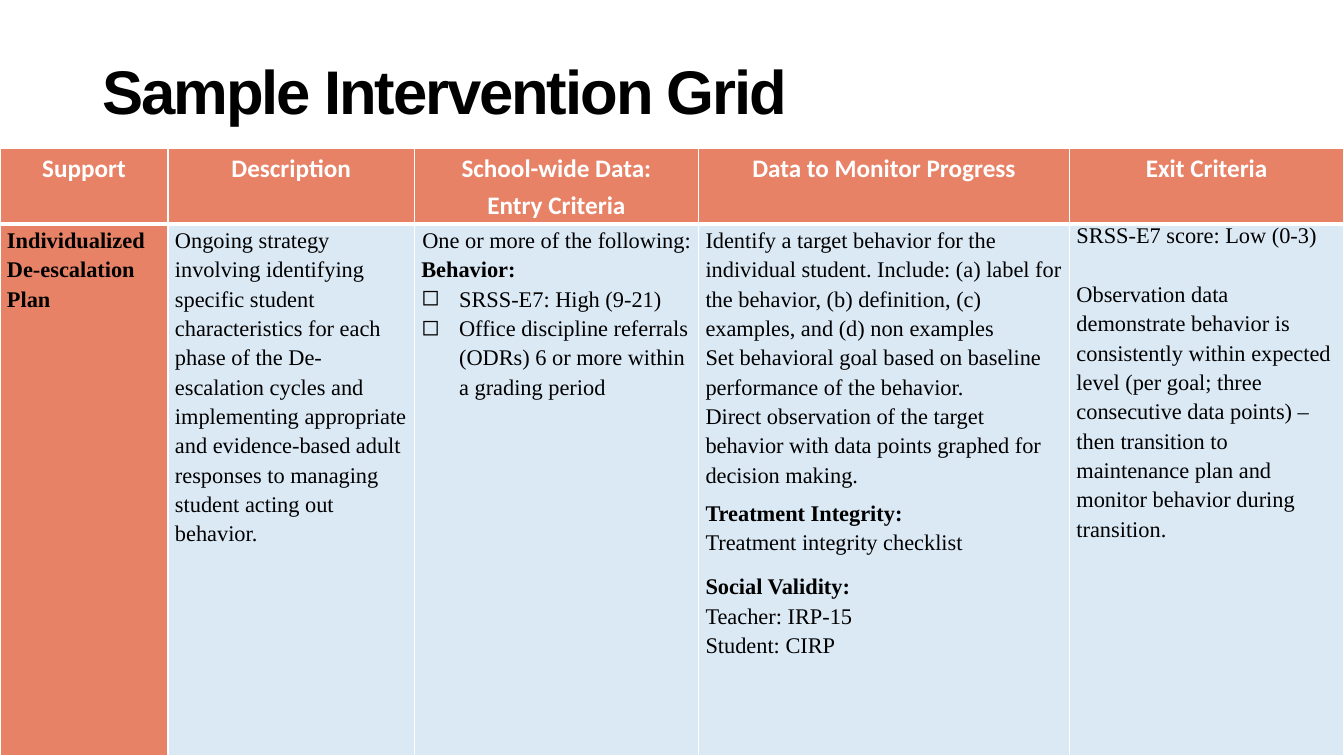
from lxml import etree
from pptx import Presentation
from pptx.dml.color import RGBColor
from pptx.enum import text
from pptx.oxml.ns import qn
from pptx.util import Pt

CORAL, PALE_BLUE, WHITE, BLACK = "E88266", "DBE9F5", "FFFFFF", "000000"
COLUMN_WIDTHS = [120, 176, 203, 265, 196]
ROW_HEIGHTS = [54, 380]
LINE_SPACING = 1.18

HEADINGS = ["Support", "Description", "School-wide Data:\nEntry Criteria",
            "Data to Monitor Progress", "Exit Criteria"]

# Each paragraph: wording, then any options of add_paragraphs
INTERVENTION = [
    [("Individualized De-escalation Plan", {"bold": True})],
    [("Ongoing strategy involving identifying specific student characteristics "
      "for each phase of the De-escalation cycles and implementing appropriate "
      "and evidence-based adult responses to managing student acting out "
      "behavior.", {})],
    [("One or more of the following:", {"indent": 0.72}),
     ("Behavior:", {"bold": True}),
     ("SRSS-E7: High (9-21)", {"bullet": True}),
     ("Office discipline referrals (ODRs) 6 or more within a grading period",
      {"bullet": True})],
    [("Identify a target behavior for the individual student. Include: (a) label "
      "for the behavior, (b) definition, (c) examples, and (d) non examples", {}),
     ("Set behavioral goal based on baseline performance of the behavior.", {}),
     ("Direct observation of the target behavior with data points graphed for "
      "decision making.", {}),
     ("Treatment Integrity:", {"bold": True, "before": 6.5}),
     ("Treatment integrity checklist", {}),
     ("Social Validity:", {"bold": True, "before": 10.5}),
     ("Teacher: IRP-15", {}),
     ("Student: CIRP", {})],
    [("SRSS-E7 score: Low (0-3)", {"spacing": 1}),
     ("Observation data demonstrate behavior is consistently within expected "
      "level (per goal; three consecutive data points) – then transition to "
      "maintenance plan and monitor behavior during transition.",
      {"before": 20.9})],
]


def color(hex_code):
    return RGBColor.from_string(hex_code)


def style_font(font, name, size, hex_code, bold):
    font.name, font.size, font.bold = name, Pt(size), bold
    font.color.rgb = color(hex_code)


def add_bullet(paragraph):
    """Give the paragraph a square bullet with a hanging indent."""
    properties = paragraph._p.get_or_add_pPr()
    properties.set("marL", str(Pt(27)))
    properties.set("indent", str(Pt(-27)))
    etree.SubElement(properties, qn("a:buChar"), char="◻")
    tabs = etree.SubElement(properties, qn("a:tabLst"))
    etree.SubElement(tabs, qn("a:tab"), pos=str(Pt(36)), algn="l")


def format_cell(cell, fill, inset, top, bottom):
    """Set fill, insets and white borders; top and bottom are line widths."""
    cell.margin_left = cell.margin_right = Pt(inset)
    cell.margin_top = cell.margin_bottom = 0
    cell.fill.solid()
    cell.fill.fore_color.rgb = color(fill)
    borders = [("a:lnL", 1), ("a:lnR", 1), ("a:lnT", top), ("a:lnB", bottom)]
    for position, (side, width) in enumerate(borders):
        line = etree.Element(qn(side), w=str(Pt(width)))
        solid = etree.SubElement(line, qn("a:solidFill"))
        etree.SubElement(solid, qn("a:srgbClr"), val=WHITE)
        cell._tc.get_or_add_tcPr().insert(position, line)


def fill_heading(cell, heading):
    format_cell(cell, CORAL, 3.6, top=1, bottom=3)
    cell.text_frame.text = heading
    for paragraph in cell.text_frame.paragraphs:
        paragraph.alignment = text.PP_ALIGN.CENTER
        paragraph.line_spacing = LINE_SPACING
        style_font(paragraph.runs[0].font, "Calibri", 18, WHITE, True)


def add_paragraphs(frame, entries):
    for index, (wording, options) in enumerate(entries):
        paragraph = frame.add_paragraph() if index else frame.paragraphs[0]
        paragraph.text = wording
        if options.get("bullet"):
            add_bullet(paragraph)
        if "indent" in options:
            paragraph._p.get_or_add_pPr().set("marL", str(Pt(options["indent"])))
        paragraph.line_spacing = options.get("spacing", LINE_SPACING)
        if "before" in options:
            paragraph.space_before = Pt(options["before"])
        style_font(paragraph.runs[0].font, "Times New Roman", 16, BLACK,
                   options.get("bold", False))


def add_title(slide, left, top, width, height):
    title = slide.shapes.title
    title.left, title.top = Pt(left), Pt(top)
    title.width, title.height = Pt(width), Pt(height)
    frame = title.text_frame
    frame.text = "Sample Intervention Grid"
    frame.vertical_anchor = text.MSO_ANCHOR.MIDDLE
    heading = frame.paragraphs[0]
    heading.alignment = text.PP_ALIGN.LEFT
    heading.line_spacing = 0.9
    style_font(heading.runs[0].font, "Arial", 44, BLACK, True)
    heading.runs[0]._r.get_or_add_rPr().set("spc", "-150")


def add_intervention_grid(slide, left, top):
    grid = slide.shapes.add_table(
        len(ROW_HEIGHTS), len(COLUMN_WIDTHS), Pt(left), Pt(top),
        Pt(sum(COLUMN_WIDTHS)), Pt(sum(ROW_HEIGHTS))).table
    for row, height in zip(grid.rows, ROW_HEIGHTS):
        row.height = Pt(height)
    for index, width in enumerate(COLUMN_WIDTHS):
        grid.columns[index].width = Pt(width)
        fill_heading(grid.cell(0, index), HEADINGS[index])
        detail = grid.cell(1, index)
        format_cell(detail, PALE_BLUE if index else CORAL, 5, top=3, bottom=1)
        add_paragraphs(detail.text_frame, INTERVENTION[index])


def main():
    deck = Presentation()
    deck.slide_width, deck.slide_height = Pt(960), Pt(540)
    slide = deck.slides.add_slide(deck.slide_layouts[5])
    add_title(slide, 66, 15, 828, 104.5)
    add_intervention_grid(slide, 0, 106)
    deck.save("out.pptx")


if __name__ == "__main__":
    main()
